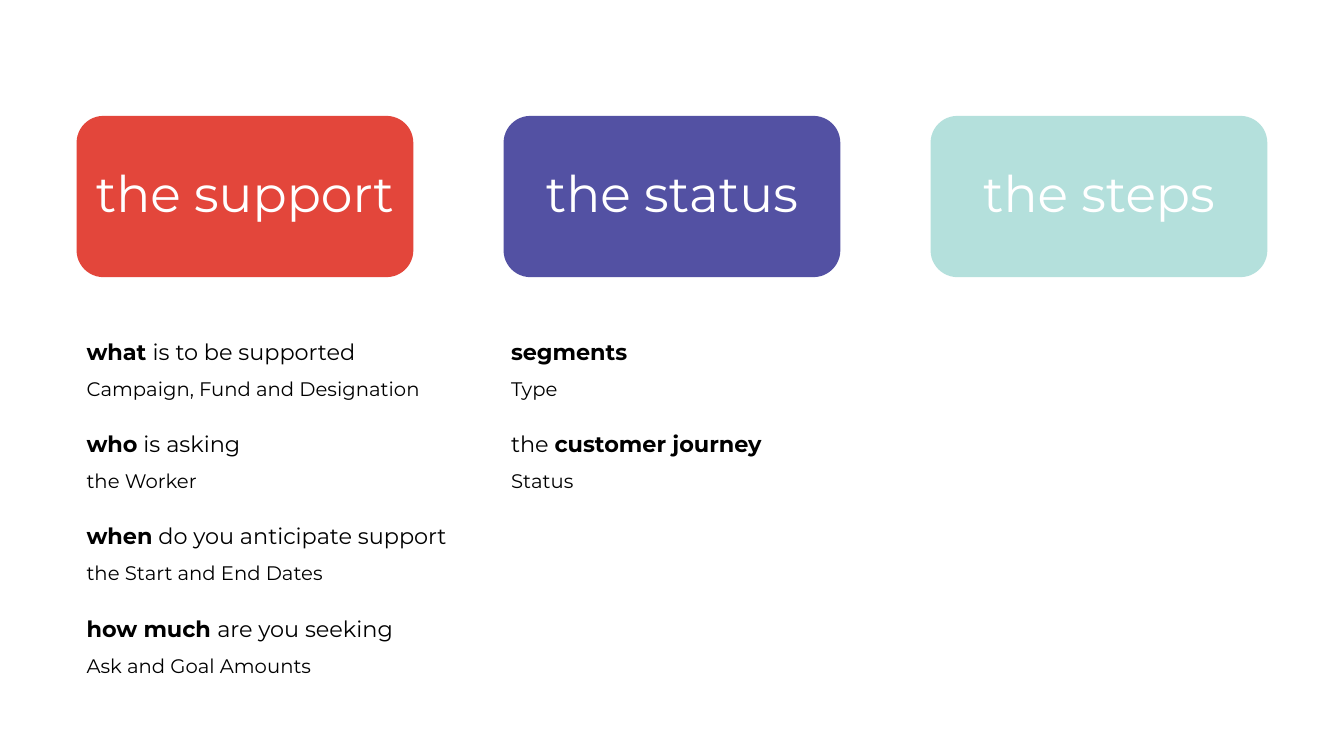
from pptx import Presentation
from pptx.dml.color import RGBColor
from pptx.enum.shapes import MSO_SHAPE as Shape
from pptx.enum.text import MSO_ANCHOR as Anchor, MSO_AUTO_SIZE as AutoSize, PP_ALIGN as Align
from pptx.util import Inches, Pt

FONT = "Montserrat"
LEFT = 0.76
CARD_TOP, CARD_WIDTH, CARD_HEIGHT, CARD_STEP = 1.15, 3.34, 1.6, 4.235
NOTE_TOP, NOTE_WIDTH, NOTE_STEP = 3.17, 4.22, 4.21
ENTRY_HEIGHT = 0.91

# Each column: title, fill, entries; an entry is its question runs (text, bold) and its field.
COLUMNS = [
    ("the support", "E3463B", [
        ([("what ", True), ("is to be supported", False)], "Campaign, Fund and Designation"),
        ([("who", True), (" is asking", False)], "the Worker"),
        ([("when", True), (" do you anticipate support", False)], "the Start and End Dates"),
        ([("how much ", True), ("are you seeking", False)], "Ask and Goal Amounts"),
    ]),
    ("the status", "5351A3", [
        ([("segments", True)], "Type"),
        ([("the ", False), ("customer journey", True)], "Status"),
    ]),
    ("the steps", "B4E0DC", []),
]


def color(value):
    return RGBColor.from_string(value)


def add_span(para, text, size, tone, bold=False):
    span = para.add_run()
    span.text = text
    span.font.name = FONT
    span.font.size = Pt(size)
    span.font.bold = bold
    span.font.color.rgb = color(tone)


def add_card(page, left, top, width, height, title, fill):
    card = page.shapes.add_shape(Shape.ROUNDED_RECTANGLE, Inches(left), Inches(top),
                                 Inches(width), Inches(height))
    card.shadow.inherit = False
    card.fill.solid()
    card.fill.fore_color.rgb = color(fill)
    card.line.fill.background()
    frame = card.text_frame
    frame.word_wrap = True
    frame.vertical_anchor = Anchor.MIDDLE
    frame.margin_left = frame.margin_right = frame.margin_top = frame.margin_bottom = Inches(0.03)
    para = frame.paragraphs[0]
    para.alignment = Align.CENTER
    para.line_spacing = 0.9
    add_span(para, title, 36, "FFFFFF")


def add_notes(page, left, top, width, entries):
    """Place question and field pairs in one text box, with a gap between pairs."""
    box = page.shapes.add_textbox(Inches(left), Inches(top), Inches(width),
                                  Inches(ENTRY_HEIGHT * len(entries)))
    frame = box.text_frame
    frame.word_wrap = True
    frame.auto_size = AutoSize.SHAPE_TO_FIT_TEXT
    for index, (question, field) in enumerate(entries):
        if index == 0:
            para = frame.paragraphs[0]
        else:
            para = frame.add_paragraph()
            para.space_before = Pt(12)
        para.line_spacing = 1.5
        for text, bold in question:
            add_span(para, text, 16, "000000", bold)
        para = frame.add_paragraph()
        para.line_spacing = 1.5
        add_span(para, field, 14, "000000")


def main():
    deck = Presentation()
    deck.slide_width, deck.slide_height = Inches(13.33), Inches(7.5)
    page = deck.slides.add_slide(deck.slide_layouts[6])
    for column, (title, fill, entries) in enumerate(COLUMNS):
        add_card(page, LEFT + column * CARD_STEP, CARD_TOP, CARD_WIDTH, CARD_HEIGHT, title, fill)
        if entries:
            add_notes(page, LEFT + column * NOTE_STEP, NOTE_TOP, NOTE_WIDTH, entries)
    deck.save("out.pptx")


if __name__ == "__main__":
    main()
